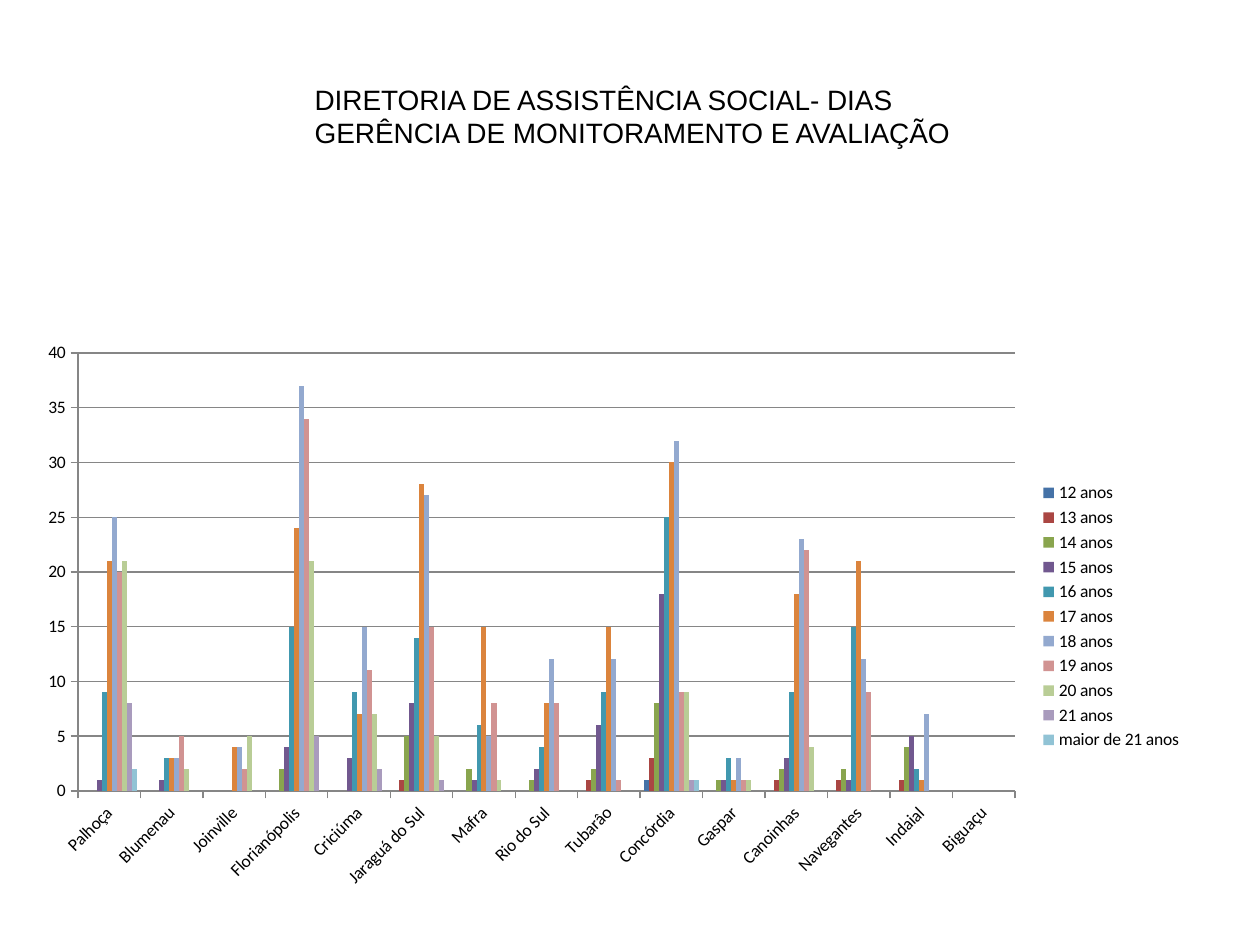
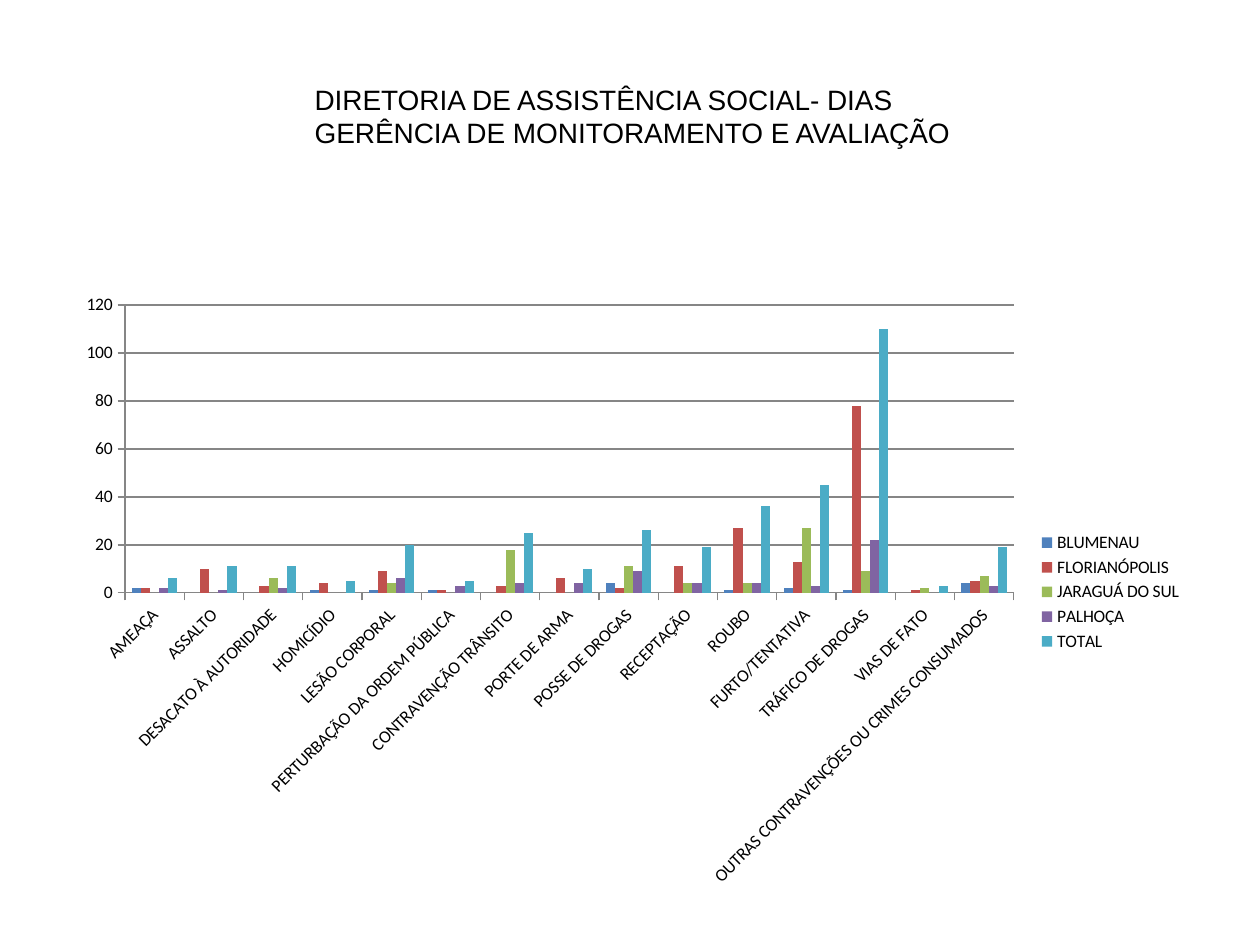
from pptx import Presentation
from pptx.chart.data import CategoryChartData
from pptx.dml.color import RGBColor
from pptx.enum.chart import XL_CHART_TYPE as ChartType, XL_LEGEND_POSITION as LegendPosition
from pptx.enum.chart import XL_TICK_MARK as TickMark
from pptx.enum.text import MSO_ANCHOR as Anchor, MSO_AUTO_SIZE as AutoSize, PP_ALIGN as Align
from pptx.oxml import parse_xml
from pptx.oxml.ns import nsdecls
from pptx.util import Pt

EMU_PER_PX = 914400 / 126
TITLE_ONLY = 5
BLACK = "000000"
AXIS_GRAY = "868686"
HEADER_BOX = (302, 76, 665, 81)
HEADER_TEXT = "DIRETORIA DE ASSISTÊNCIA SOCIAL- DIAS\nGERÊNCIA DE MONITORAMENTO E AVALIAÇÃO"

AGE_CHART = {
    "box": (25, 333, 1170, 567),
    "plot": (53, 20, 937, 438),
    "scale": (40, 5),
    "colors": ["4572A7", "AA4643", "89A54E", "71588F", "4198AF", "DB843D",
               "93A9CF", "D19392", "B9CD96", "A99BBD", "91C3D5"],
    "categories": ["Palhoça", "Blumenau", "Joinville", "Florianópolis", "Criciúma",
                   "Jaraguá do Sul", "Mafra", "Rio do Sul", "Tubarâo", "Concórdia",
                   "Gaspar", "Canoinhas", "Navegantes", "Indaial", "Biguaçu"],
    "series": {
        "12 anos": [None] * 9 + [1] + [None] * 5,
        "13 anos": [None] * 5 + [1, None, None, 1, 3, None, 1, 1, 1, None],
        "14 anos": [None, None, None, 2, None, 5, 2, 1, 2, 8, 1, 2, 2, 4, None],
        "15 anos": [1, 1, None, 4, 3, 8, 1, 2, 6, 18, 1, 3, 1, 5, None],
        "16 anos": [9, 3, None, 15, 9, 14, 6, 4, 9, 25, 3, 9, 15, 2, None],
        "17 anos": [21, 3, 4, 24, 7, 28, 15, 8, 15, 30, 1, 18, 21, 1, None],
        "18 anos": [25, 3, 4, 37, 15, 27, 5, 12, 12, 32, 3, 23, 12, 7, None],
        "19 anos": [20, 5, 2, 34, 11, 15, 8, 8, 1, 9, 1, 22, 9, None, None],
        "20 anos": [21, 2, 5, 21, 7, 5, 1, None, None, 9, 1, 4, None, None, None],
        "21 anos": [8, None, None, 5, 2, 1, None, None, None, 1] + [None] * 5,
        "maior de 21 anos": [2] + [None] * 8 + [1] + [None] * 5,
    },
}

OFFENCE_CHART = {
    "box": (64, 284, 1131, 616),
    "plot": (61, 21, 889, 288),
    "scale": (120, 20),
    "colors": ["4F81BD", "C0504D", "9BBB59", "8064A2", "4BACC6"],
    "categories": ["AMEAÇA", "ASSALTO", "DESACATO À AUTORIDADE", "HOMICÍDIO",
                   "LESÃO CORPORAL", "PERTURBAÇÃO DA ORDEM PÚBLICA",
                   "CONTRAVENÇÃO TRÂNSITO", "PORTE DE ARMA", "POSSE DE DROGAS",
                   "RECEPTAÇÃO", "ROUBO", "FURTO/TENTATIVA", "TRÁFICO DE DROGAS",
                   "VIAS DE FATO", "OUTRAS CONTRAVENÇÕES OU CRIMES CONSUMADOS"],
    "series": {
        "BLUMENAU": [2, None, None, 1, 1, 1, None, None, 4, None, 1, 2, 1, None, 4],
        "FLORIANÓPOLIS": [2, 10, 3, 4, 9, 1, 3, 6, 2, 11, 27, 13, 78, 1, 5],
        "JARAGUÁ DO SUL": [None, None, 6, None, 4, None, 18, None, 11, 4, 4, 27, 9, 2, 7],
        "PALHOÇA": [2, 1, 2, None, 6, 3, 4, 4, 9, 4, 4, 3, 22, None, 3],
        "TOTAL": [6, 11, 11, 5, 20, 5, 25, 10, 26, 19, 36, 45, 110, 3, 19],
    },
}


def px(length):
    return round(length * EMU_PER_PX)


def color(hex_string):
    return RGBColor.from_string(hex_string)


def set_font(font, name, size):
    font.name = name
    font.size = Pt(size)
    font.bold = False
    font.color.rgb = color(BLACK)


def style_line(line):
    line.color.rgb = color(AXIS_GRAY)
    line.width = Pt(0.75)


def add_header(slide, box):
    title = slide.shapes.title
    title.left, title.top, title.width, title.height = map(px, box)
    frame = title.text_frame
    frame.text = HEADER_TEXT
    frame.word_wrap = True
    frame.auto_size = AutoSize.SHAPE_TO_FIT_TEXT
    frame.vertical_anchor = Anchor.TOP
    for paragraph in frame.paragraphs:
        paragraph.alignment = Align.LEFT
        paragraph.space_before = Pt(0)
        for run in paragraph.runs:
            set_font(run.font, "Arial", 16)


def place_plot(chart, box, plot):
    left, top, width, height = plot
    fractions = {"x": left / box[2], "y": top / box[3],
                 "w": width / box[2], "h": height / box[3]}
    modes = "".join(f'<c:{key}Mode val="edge"/>' for key in "xy")
    values = "".join(f'<c:{key} val="{value:.4f}"/>' for key, value in fractions.items())
    layout = parse_xml(
        f'<c:layout {nsdecls("c")}><c:manualLayout><c:layoutTarget val="inner"/>'
        f'{modes}{values}</c:manualLayout></c:layout>')
    plot_area = chart.element.xpath("c:chart/c:plotArea")[0]
    for previous in plot_area.xpath("c:layout"):
        plot_area.remove(previous)
    plot_area.insert(0, layout)


def style_axes(chart, maximum, step):
    for axis in (chart.category_axis, chart.value_axis):
        axis.major_tick_mark = TickMark.OUTSIDE
        axis.minor_tick_mark = TickMark.NONE
        style_line(axis.format.line)
        set_font(axis.tick_labels.font, "Calibri", 10)
    chart.category_axis.has_major_gridlines = False
    value_axis = chart.value_axis
    value_axis.minimum_scale = 0
    value_axis.maximum_scale = maximum
    value_axis.major_unit = step
    value_axis.has_major_gridlines = True
    style_line(value_axis.major_gridlines.format.line)
    label_body = chart.element.xpath("//c:catAx/c:txPr/a:bodyPr")[0]
    label_body.set("rot", "-2700000")
    label_body.set("vert", "horz")


def add_column_chart(slide, content):
    chart_data = CategoryChartData()
    chart_data.categories = content["categories"]
    for name, values in content["series"].items():
        chart_data.add_series(name, values)
    box = content["box"]
    chart = slide.shapes.add_chart(ChartType.COLUMN_CLUSTERED, *map(px, box), chart_data).chart
    chart.has_title = False
    set_font(chart.font, "Calibri", 10)
    chart.has_legend = True
    chart.legend.position = LegendPosition.RIGHT
    chart.legend.include_in_layout = False
    set_font(chart.legend.font, "Calibri", 10)
    columns = chart.plots[0]
    columns.vary_by_categories = False
    columns.gap_width = 150
    columns.overlap = 0
    for series, fill_color in zip(columns.series, content["colors"]):
        series.invert_if_negative = False
        series.format.fill.solid()
        series.format.fill.fore_color.rgb = color(fill_color)
    style_axes(chart, *content["scale"])
    place_plot(chart, box, content["plot"])


def add_chart_slide(presentation, content):
    slide = presentation.slides.add_slide(presentation.slide_layouts[TITLE_ONLY])
    add_header(slide, HEADER_BOX)
    add_column_chart(slide, content)


def main():
    presentation = Presentation()
    presentation.slide_width = px(1260)
    presentation.slide_height = px(945)
    for content in (AGE_CHART, OFFENCE_CHART):
        add_chart_slide(presentation, content)
    presentation.save("out.pptx")


if __name__ == "__main__":
    main()
